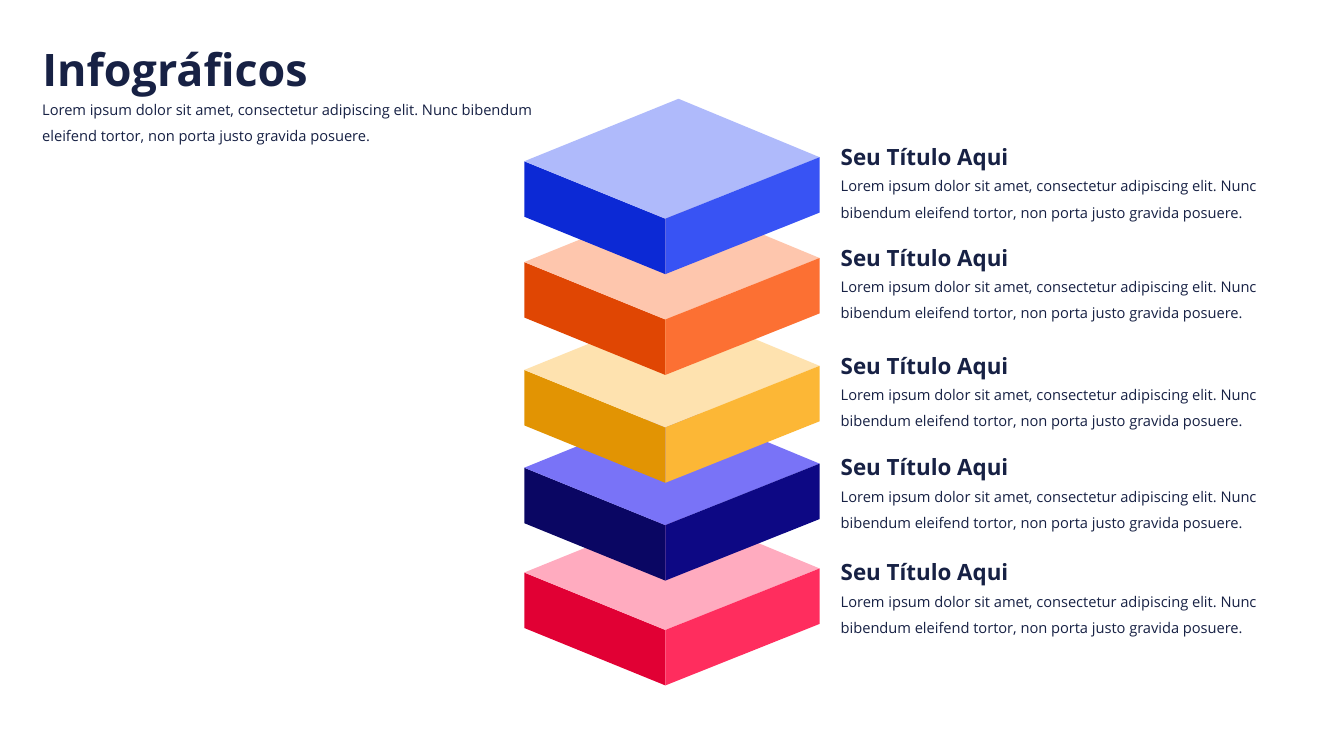
"""Build a slide with a stack of five coloured blocks and their captions."""
import pptx
import pptx.util
import pptx.dml.color
import pptx.enum.text

Inches = pptx.util.Inches

HEAD = "Infográficos"
LABEL = "Seu Título Aqui"
BODY = ("Lorem ipsum dolor sit amet, consectetur adipiscing elit. "
        "Nunc bibendum eleifend tortor, non porta justo gravida posuere.")
FONT, INK = "Open Sans", "172144"

# Top of block, top of caption, colours of left, top and right faces
LAYERS = [
    (0.98, 1.37, ("0C29D5", "AFBAFB", "3853F4")),
    (1.98, 2.37, ("E04603", "FEC6AD", "FC7033")),
    (3.05, 3.44, ("E29403", "FEE2AF", "FCB736")),
    (4.02, 4.45, ("0A0663", "7973F7", "0D0884")),
    (5.06, 5.49, ("E10034", "FFABBF", "FF2D5E")),
]

LEFT, FRONT, BACK, RIGHT = (5.2, 0.62), (6.6, 1.19), (6.73, 0), (8.13, 0.58)
DEPTH = 0.55
TEXT_X, TEXT_W = 8.24, 4.39
HEAD_X, HEAD_W = 0.32, 5.48


def color(code):
    return pptx.dml.color.RGBColor.from_string(code)


def lower(point):
    return point[0], point[1] + DEPTH


FACES = [
    (lower(FRONT), lower(LEFT), LEFT, FRONT),
    (FRONT, LEFT, BACK, RIGHT),
    (RIGHT, lower(RIGHT), lower(FRONT), FRONT),
]


def draw_face(slide, face, top, code):
    points = [(Inches(x), Inches(top + y)) for x, y in face]
    form = slide.shapes.build_freeform(*points[0])
    form.add_line_segments(points[1:], close=True)
    shape = form.convert_to_shape()
    shape.shadow.inherit = False
    shape.fill.solid()
    shape.fill.fore_color.rgb = color(code)
    shape.line.fill.background()


def set_text(shape, text, size, bold=False, space=1.0):
    frame = shape.text_frame
    frame.text = text
    frame.word_wrap = True
    frame.auto_size = pptx.enum.text.MSO_AUTO_SIZE.NONE
    frame.vertical_anchor = pptx.enum.text.MSO_ANCHOR.TOP
    line = frame.paragraphs[0]
    line.alignment = pptx.enum.text.PP_ALIGN.LEFT
    line.line_spacing = space
    font = line.runs[0].font
    font.name, font.size, font.bold = FONT, pptx.util.Pt(size), bold
    font.color.rgb = color(INK)


def add_text(slide, box, text, size, bold=False, space=1.0):
    shape = slide.shapes.add_textbox(*map(Inches, box))
    set_text(shape, text, size, bold, space)


def main():
    deck = pptx.Presentation()
    deck.slide_width, deck.slide_height = Inches(13.33), Inches(7.5)
    slide = deck.slides.add_slide(deck.slide_layouts[5])

    title = slide.shapes.title
    title.left, title.top = Inches(HEAD_X), Inches(0.36)
    title.width, title.height = Inches(HEAD_W), Inches(0.64)
    set_text(title, HEAD, 32, bold=True)
    add_text(slide, (HEAD_X, 0.86, HEAD_W, 0.63), BODY, 10.5, space=1.5)

    for top, _, codes in reversed(LAYERS):
        for face, code in zip(FACES, codes):
            draw_face(slide, face, top, code)

    for _, top, _ in LAYERS:
        add_text(slide, (TEXT_X, top, TEXT_W, 0.37), LABEL, 16, bold=True)
        add_text(slide, (TEXT_X, top + 0.25, TEXT_W, 0.63), BODY, 10.5, space=1.5)

    deck.save("out.pptx")


if __name__ == "__main__":
    main()
